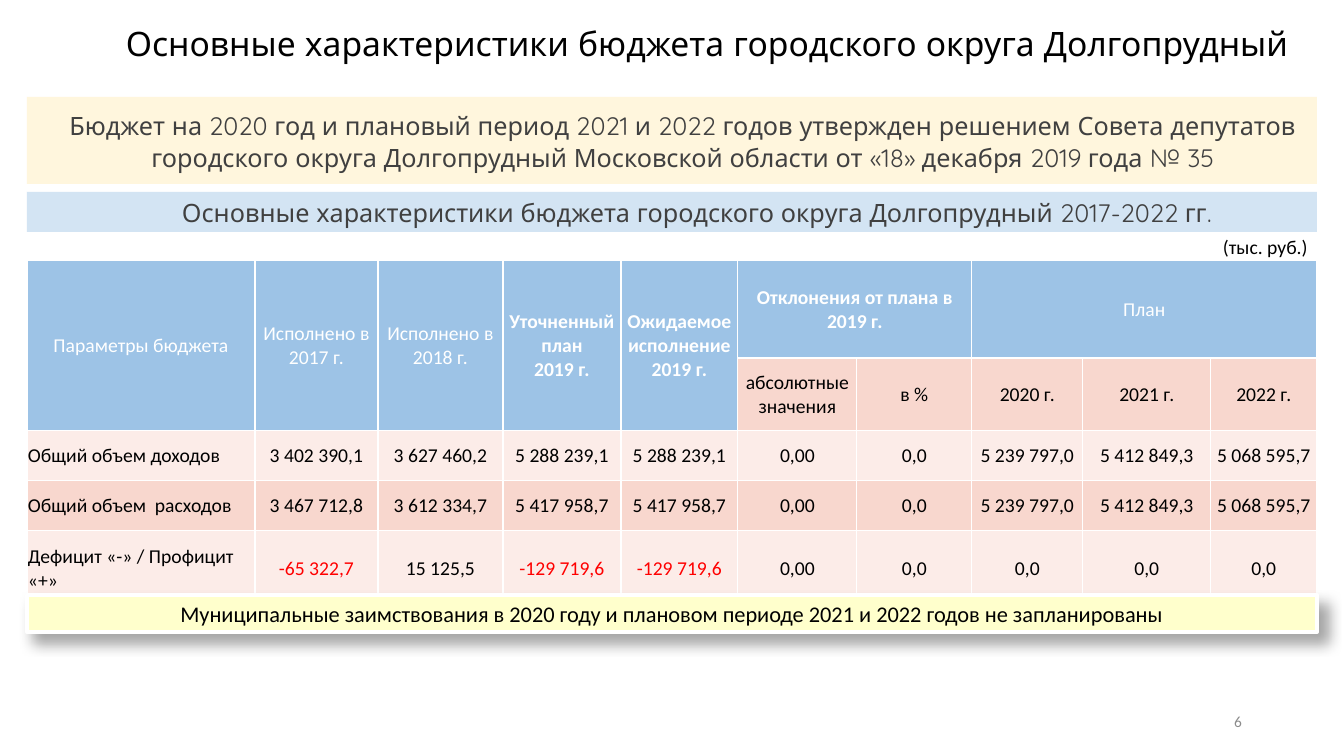
from dataclasses import dataclass

from lxml import etree
from pptx import Presentation
from pptx.dml.color import RGBColor
from pptx.enum.shapes import MSO_SHAPE
from pptx.enum.text import MSO_ANCHOR, MSO_AUTO_SIZE, PP_ALIGN
from pptx.oxml import parse_xml
from pptx.oxml.ns import nsdecls, qn
from pptx.util import Emu, Pt

LEFT, CENTER, RIGHT = PP_ALIGN.LEFT, PP_ALIGN.CENTER, PP_ALIGN.RIGHT
TOP, MIDDLE = MSO_ANCHOR.TOP, MSO_ANCHOR.MIDDLE
RECTANGLE = MSO_SHAPE.RECTANGLE
EMU_PER_PX = 914400 / 100.8

TITLE = "Основные характеристики бюджета городского округа Долгопрудный"
DECISION = ("Бюджет на 2020 год и плановый период 2021 и 2022 годов утвержден решением "
            "Совета депутатов городского округа Долгопрудный Московской области "
            "от «18» декабря 2019 года № 35")
SUBTITLE = TITLE + " 2017-2022 гг."
UNIT = "(тыс. руб.)"
BORROWING = ("Муниципальные заимствования в 2020 году и плановом периоде "
             "2021 и 2022 годов не запланированы")
PAGE_NUMBER = "6"

# text, column, rows spanned, columns spanned, bold
HEADERS = [
    (["Параметры бюджета"], 0, 2, 1, False),
    (["Исполнено в", "2017 г."], 1, 2, 1, False),
    (["Исполнено в", "2018 г."], 2, 2, 1, False),
    (["Уточненный план", "2019 г."], 3, 2, 1, True),
    (["Ожидаемое исполнение", "2019 г."], 4, 2, 1, True),
    (["Отклонения от плана в 2019 г."], 5, 1, 2, True),
    (["План"], 7, 1, 3, False),
]
SUBHEADERS = ["абсолютные значения", "в %", "2020 г.", "2021 г.", "2022 г."]
BUDGET = [
    ["Общий объем доходов", "3 402 390,1", "3 627 460,2", "5 288 239,1", "5 288 239,1",
     "0,00", "0,0", "5 239 797,0", "5 412 849,3", "5 068 595,7"],
    ["Общий объем  расходов", "3 467 712,8", "3 612 334,7", "5 417 958,7", "5 417 958,7",
     "0,00", "0,0", "5 239 797,0", "5 412 849,3", "5 068 595,7"],
    ["Дефицит «-» / Профицит «+»", "-65 322,7", "15 125,5", "-129 719,6", "-129 719,6",
     "0,00", "0,0", "0,0", "0,0", "0,0"],
]
COLUMN_WIDTHS = [228, 123, 125, 118, 117, 119, 115, 111, 128, 106]
ROW_HEIGHTS = [98, 72, 50, 50, 75]
MARGIN = 27
CONTENT_WIDTH = sum(COLUMN_WIDTHS)
FIRST_SUBHEADER_COLUMN = 5


@dataclass(frozen=True)
class Theme:
    display: str = "Quicksand"
    body: str = "Calibri"
    title_size: int = 24
    banner_size: int = 18
    note_size: int = 16
    table_size: int = 14
    number_size: int = 11
    black: str = "000000"
    white: str = "FFFFFF"
    dark: str = "404040"
    gray: str = "8C8C8C"
    negative: str = "FF0000"
    cream: str = "FFF2CC"
    blue: str = "BDD7EE"
    yellow: str = "FFFFCC"
    header: str = "9DC3E6"
    band_dark: str = "F8D7CE"
    band_light: str = "FCECE8"


THEME = Theme()


def px(length):
    return Emu(round(length * EMU_PER_PX))


def place(shape, left, top, width, height):
    shape.left, shape.top, shape.width, shape.height = map(px, (left, top, width, height))


def write(frame, lines, size, color, font=THEME.body, align=CENTER, bold=False):
    for index, line in enumerate(lines):
        para = frame.paragraphs[0] if index == 0 else frame.add_paragraph()
        para.alignment = align
        span = para.add_run()
        span.text = line
        span.font.name, span.font.size, span.font.bold = font, Pt(size), bold
        span.font.color.rgb = RGBColor.from_string(color)


def add_band(page, top, height, fill, text, size, color, font, indent=0, opacity=100):
    """Add a full-width filled strip with centred text."""
    band = page.shapes.add_shape(RECTANGLE, px(MARGIN), px(top), px(CONTENT_WIDTH), px(height))
    band.shadow.inherit = False
    band.fill.solid()
    band.fill.fore_color.rgb = RGBColor.from_string(fill)
    band.line.fill.background()
    if opacity < 100:
        tint = band.fill._xPr.find(qn("a:solidFill"))[0]
        etree.SubElement(tint, qn("a:alpha")).set("val", str(opacity * 1000))
    frame = band.text_frame
    frame.word_wrap, frame.vertical_anchor = True, MIDDLE
    write(frame, [text], size, color, font)
    frame.paragraphs[0]._p.get_or_add_pPr().set("marL", str(px(indent)))
    return band


def add_text(page, left, top, width, height, text, size, color, align, anchor=TOP, wrap=True):
    box = page.shapes.add_textbox(px(left), px(top), px(width), px(height))
    box.text_frame.word_wrap, box.text_frame.vertical_anchor = wrap, anchor
    write(box.text_frame, [text], size, color, align=align)


def cast_shadow(shape):
    effects = shape._element.spPr.find(qn("a:effectLst"))
    effects.append(parse_xml(
        f'<a:outerShdw {nsdecls("a")} blurRad="{Pt(10.2)}" dist="{Pt(8)}" dir="2700000" '
        f'algn="tl" rotWithShape="0"><a:srgbClr val="{THEME.black}">'
        '<a:alpha val="35000"/></a:srgbClr></a:outerShdw>'))


def style_cell(cell, fill):
    cell.margin_left = cell.margin_top = cell.margin_right = px(1)
    cell.margin_bottom = 0
    cell.vertical_anchor = MIDDLE
    properties = cell._tc.get_or_add_tcPr()
    for side in ("lnL", "lnR", "lnT", "lnB"):
        properties.append(parse_xml(
            f'<a:{side} {nsdecls("a")} w="{Pt(1)}"><a:solidFill>'
            f'<a:srgbClr val="{THEME.white}"/></a:solidFill></a:{side}>'))
    cell.fill.solid()
    cell.fill.fore_color.rgb = RGBColor.from_string(fill)


def add_budget_table(page):
    table = page.shapes.add_table(len(ROW_HEIGHTS), len(COLUMN_WIDTHS), px(MARGIN), px(260),
                                  px(CONTENT_WIDTH), px(sum(ROW_HEIGHTS))).table
    table.first_row = table.horz_banding = False
    for column, width in zip(table.columns, COLUMN_WIDTHS):
        column.width = px(width)
    row_fills = [THEME.header, THEME.band_dark, THEME.band_light, THEME.band_dark,
                 THEME.band_light]
    for row, height, fill in zip(table.rows, ROW_HEIGHTS, row_fills):
        row.height = px(height)
        for cell in row.cells:
            style_cell(cell, fill)

    for lines, column, rows, columns, bold in HEADERS:
        cell = table.cell(0, column)
        cell.merge(table.cell(rows - 1, column + columns - 1))
        write(cell.text_frame, lines, THEME.table_size, THEME.white, bold=bold)
    for column, text in enumerate(SUBHEADERS, FIRST_SUBHEADER_COLUMN):
        write(table.cell(1, column).text_frame, [text], THEME.table_size, THEME.black)
    for row, values in enumerate(BUDGET, 2):
        for column, text in enumerate(values):
            color = THEME.negative if text.startswith("-") else THEME.black
            write(table.cell(row, column).text_frame, [text], THEME.table_size, color,
                  align=CENTER if column else LEFT)


def main():
    deck = Presentation()
    deck.slide_width, deck.slide_height = px(1344), px(756)
    page = deck.slides.add_slide(deck.slide_layouts[5])

    title = page.shapes.title
    place(title, 97, 18, 1220, 50)
    title.text_frame.word_wrap, title.text_frame.vertical_anchor = True, TOP
    title.text_frame.auto_size = MSO_AUTO_SIZE.NONE
    write(title.text_frame, [TITLE], THEME.title_size, THEME.black, THEME.display)

    decision = add_band(page, 97, 87, THEME.cream, DECISION, THEME.banner_size, THEME.dark,
                        THEME.display, indent=22, opacity=66)
    decision.text_frame.paragraphs[0].line_spacing = 1.07
    add_budget_table(page)
    note = add_band(page, 595, 37, THEME.yellow, BORROWING, THEME.note_size, THEME.black,
                    THEME.body)
    note.line.color.rgb = RGBColor.from_string(THEME.white)
    note.line.width = Pt(3)
    cast_shadow(note)
    add_band(page, 192, 40, THEME.blue, SUBTITLE, THEME.banner_size, THEME.dark,
             THEME.display, indent=50, opacity=66)
    add_text(page, 1213, 230, 106, 34, UNIT, THEME.table_size, THEME.black, LEFT, wrap=False)
    add_text(page, 950, 701, 302, 40, PAGE_NUMBER, THEME.number_size, THEME.gray, RIGHT, MIDDLE)
    deck.save("out.pptx")


if __name__ == "__main__":
    main()
